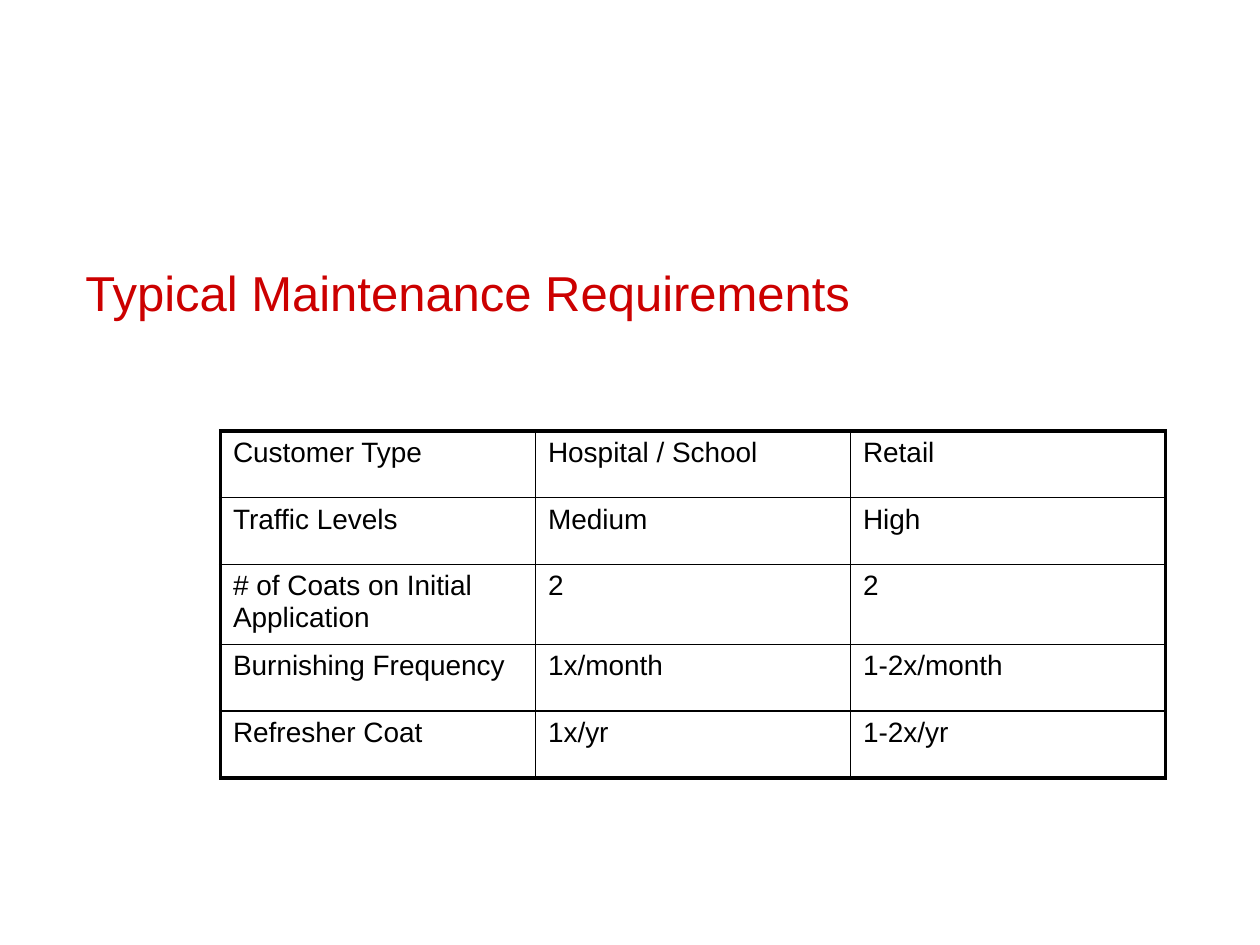
from dataclasses import dataclass

from lxml.etree import SubElement
from pptx import Presentation
from pptx.dml.color import RGBColor as Color
from pptx.oxml.ns import qn
from pptx.util import Emu, Inches, Pt

COLORS = {"title": "CC0000", "ink": "000000"}
FONT = "Arial"
WIDTH, HEIGHT = Inches(10), Inches(7.5)
THICK, THIN = 2.25, 1

REQUIREMENTS = [
    ("Customer Type", "Hospital / School", "Retail"),
    ("Traffic Levels", "Medium", "High"),
    ("# of Coats on Initial Application", "2", "2"),
    ("Burnishing Frequency", "1x/month", "1-2x/month"),
    ("Refresher Coat", "1x/yr", "1-2x/yr"),
]


@dataclass(frozen=True)
class Area:
    left: float
    top: float
    width: float
    height: float

    def lengths(self) -> tuple[Emu, ...]:
        return (Emu(int(WIDTH * self.left)), Emu(int(HEIGHT * self.top)),
                Emu(int(WIDTH * self.width)), Emu(int(HEIGHT * self.height)))


TITLE_AREA = Area(0.058, 2 / 7.5, 0.85, 0.92 / 7.5)
TABLE_AREA = Area(0.175, 3.42 / 7.5, 0.75, 5 * 0.53 / 7.5)


def write(frame, text: str, size: float, color: str) -> None:
    para = frame.paragraphs[0]
    para.text = text
    para.font.name = FONT
    para.font.size = Pt(size)
    para.font.color.rgb = Color.from_string(COLORS[color])


def add_title(page, area: Area, text: str) -> None:
    frame = page.shapes.add_textbox(*area.lengths()).text_frame
    frame.word_wrap = True
    frame.margin_top = Inches(0.08)
    write(frame, text, 28, "title")


def set_border(cell, side: str, weight: float) -> None:
    properties = cell._tc.get_or_add_tcPr()
    line = SubElement(properties, qn(f"a:ln{side}"), w=str(Pt(weight)))
    fill = SubElement(line, qn("a:solidFill"))
    SubElement(fill, qn("a:srgbClr"), val=COLORS["ink"])


def add_grid(page, area: Area, rows: list[tuple[str, ...]]) -> None:
    row_count, column_count = len(rows), len(rows[0])
    table = page.shapes.add_table(row_count, column_count, *area.lengths()).table
    table.first_row = table.horz_banding = False
    for row, texts in enumerate(rows):
        for column, text in enumerate(texts):
            cell = table.cell(row, column)
            write(cell.text_frame, text, 16, "ink")
            outer_sides = {
                "L": column == 0,
                "R": column == column_count - 1,
                "T": row == 0,
                "B": row == row_count - 1,
            }
            for side, outer in outer_sides.items():
                set_border(cell, side, THICK if outer else THIN)
            cell.fill.background()


def main() -> None:
    deck = Presentation()
    deck.slide_width, deck.slide_height = WIDTH, HEIGHT
    page = deck.slides.add_slide(deck.slide_layouts[6])
    add_title(page, TITLE_AREA, "Typical Maintenance Requirements")
    add_grid(page, TABLE_AREA, REQUIREMENTS)
    deck.save("out.pptx")


if __name__ == "__main__":
    main()
